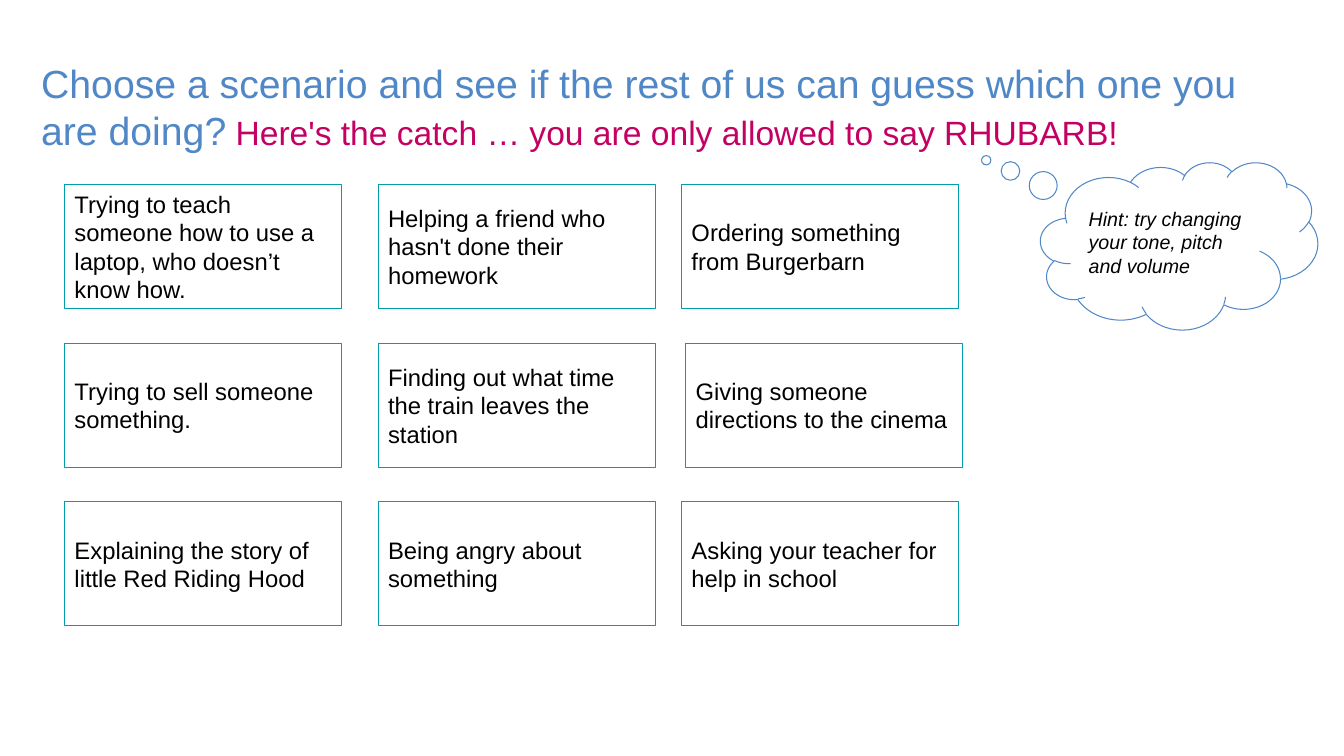
from dataclasses import dataclass

from pptx import Presentation
from pptx.dml.color import RGBColor
from pptx.enum.shapes import MSO_SHAPE
from pptx.enum.text import MSO_ANCHOR, PP_ALIGN
from pptx.util import Inches, Pt


@dataclass(frozen=True)
class Theme:
    font: str = "Arial"
    blue: RGBColor = RGBColor(0x50, 0x87, 0xC7)
    pink: RGBColor = RGBColor(0xC4, 0x00, 0x63)
    teal: RGBColor = RGBColor(0x00, 0x9D, 0xAD)
    black: RGBColor = RGBColor(0, 0, 0)
    title_size: float = 28
    catch_size: float = 24
    card_size: float = 17
    hint_size: float = 14
    outline: float = 0.75
    inset: float = 0.1


THEME = Theme()

TASK = "Choose a scenario and see if the rest of us can guess which one you are doing?"
CATCH = " Here's the catch … you are only allowed to say RHUBARB!"
HINT = "Hint: try changing your tone, pitch and volume"
SCENARIOS = [
    ["Trying to teach someone how to use a laptop, who doesn’t know how.",
     "Helping a friend who hasn't done their homework",
     "Ordering something from Burgerbarn"],
    ["Trying to sell someone something.",
     "Finding out what time the train leaves the station",
     "Giving someone directions to the cinema"],
    ["Explaining the story of little Red Riding Hood",
     "Being angry about something",
     "Asking your teacher for help in school"],
]


def style_run(run, size, color, italic=None):
    run.font.name = THEME.font
    run.font.size = Pt(size)
    run.font.color.rgb = color
    run.font.italic = italic


def place(box):
    return [Inches(length) for length in box]


def add_title(slide, box):
    frame = slide.shapes.add_textbox(*place(box)).text_frame
    frame.word_wrap = True
    frame.vertical_anchor = MSO_ANCHOR.MIDDLE
    paragraph = frame.paragraphs[0]
    for words, size, color in ((TASK, THEME.title_size, THEME.blue),
                               (CATCH, THEME.catch_size, THEME.pink)):
        run = paragraph.add_run()
        run.text = words
        style_run(run, size, color)


def add_outlined(slide, preset, box, words, size, line_color, italic=None):
    """Add an unfilled shape with left-aligned text and return it."""
    shape = slide.shapes.add_shape(preset, *place(box))
    shape.shadow.inherit = False
    shape.fill.background()
    shape.line.color.rgb = line_color
    shape.line.width = Pt(THEME.outline)
    frame = shape.text_frame
    frame.word_wrap = True
    frame.vertical_anchor = MSO_ANCHOR.MIDDLE
    frame.margin_left = frame.margin_right = Inches(THEME.inset)
    frame.margin_top = frame.margin_bottom = Inches(THEME.inset)
    frame.text = words
    paragraph = frame.paragraphs[0]
    paragraph.alignment = PP_ALIGN.LEFT
    style_run(paragraph.runs[0], size, THEME.black, italic)
    return shape


def add_hint(slide, box):
    cloud = add_outlined(slide, MSO_SHAPE.CLOUD_CALLOUT, box, HINT,
                         THEME.hint_size, THEME.blue, italic=True)
    cloud.adjustments[0] = -0.696
    cloud.adjustments[1] = -0.512


def add_scenarios(slide, box):
    left, top, width, height = box
    card_width, card_height = 2.75, 1.23
    column_offsets = (0, 3.11, width - card_width)
    row_step = (height - card_height) / (len(SCENARIOS) - 1)
    row_shifts = {(1, 2): 0.04}
    for row, scenarios in enumerate(SCENARIOS):
        for column, scenario in enumerate(scenarios):
            x = left + column_offsets[column] + row_shifts.get((row, column), 0)
            card = (x, top + row * row_step, card_width, card_height)
            add_outlined(slide, MSO_SHAPE.RECTANGLE, card, scenario,
                         THEME.card_size, THEME.teal)


def main():
    deck = Presentation()
    deck.slide_width, deck.slide_height = Inches(13.33), Inches(7.5)
    slide = deck.slides.add_slide(deck.slide_layouts[6])
    add_title(slide, (0.31, 0.49, 12.35, 1.12))
    add_hint(slide, (10.32, 1.61, 2.75, 1.66))
    add_scenarios(slide, (0.64, 1.83, 8.87, 4.38))
    deck.save("out.pptx")


if __name__ == "__main__":
    main()
